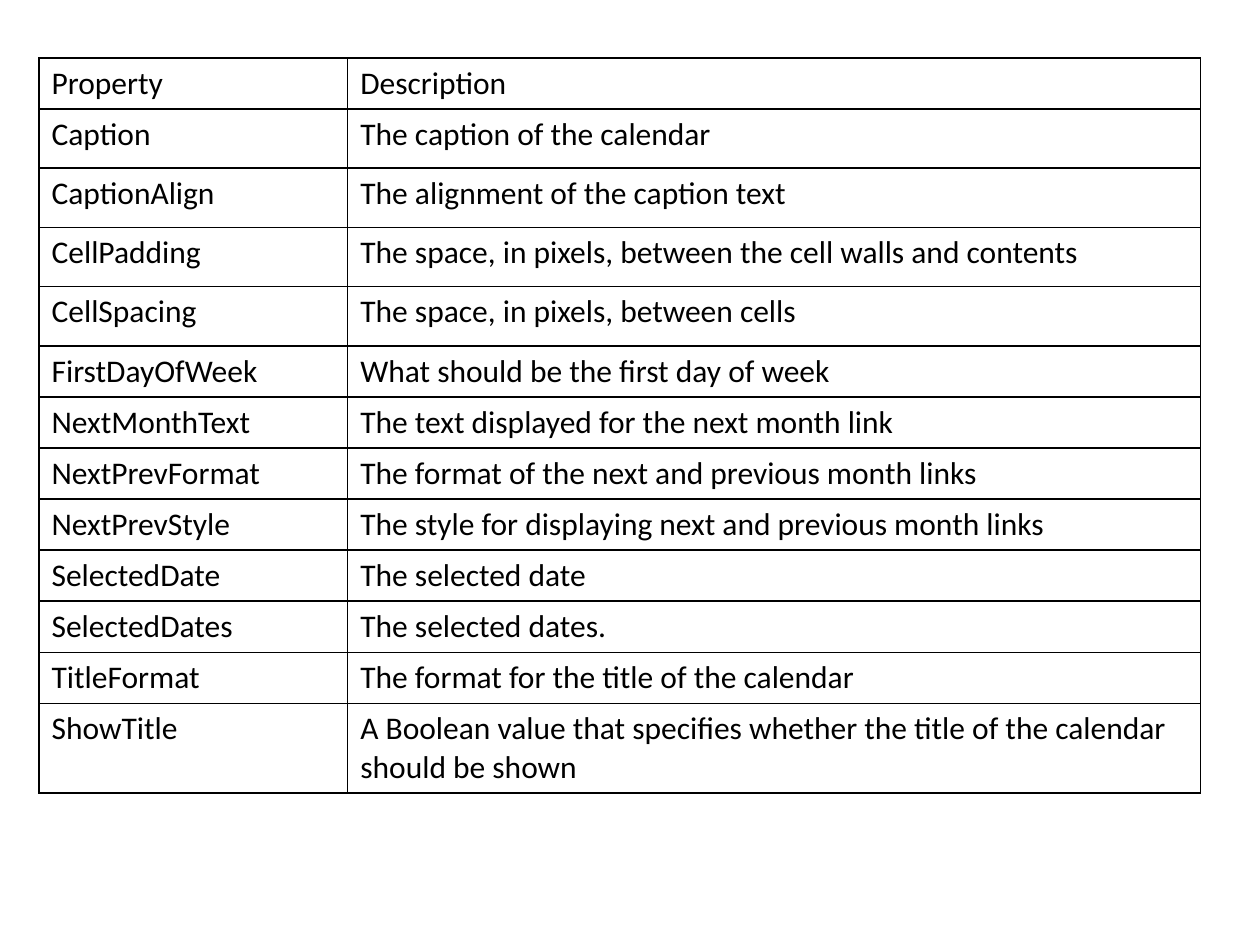
from dataclasses import dataclass

from lxml.etree import SubElement
from pptx import Presentation
from pptx.dml.color import RGBColor
from pptx.oxml.ns import qn
from pptx.util import Inches, Pt


@dataclass(frozen=True)
class Theme:
    font: str = "Calibri"
    size: float = 18
    ink: str = "000000"
    paper: str = "FFFFFF"
    border: float = 1


THEME = Theme()
SLIDE_WIDTH, SLIDE_HEIGHT = 10, 7.5
TABLE_BOX = (0.31, 0.46, 9.22, 5.78)
COLUMN_SHARES = (2.45 / 9.22, 6.77 / 9.22)
ROW_WEIGHTS = [0.4] + [0.47] * 4 + [0.4] * 7 + [0.7]

PROPERTIES = [
    ("Property", "Description"),
    ("Caption", "The caption of the calendar"),
    ("CaptionAlign", "The alignment of the caption text"),
    ("CellPadding", "The space, in pixels, between the cell walls and contents"),
    ("CellSpacing", "The space, in pixels, between cells"),
    ("FirstDayOfWeek", "What should be the first day of week"),
    ("NextMonthText", "The text displayed for the next month link"),
    ("NextPrevFormat", "The format of the next and previous month links"),
    ("NextPrevStyle", "The style for displaying next and previous month links"),
    ("SelectedDate", "The selected date"),
    ("SelectedDates", "The selected dates."),
    ("TitleFormat", "The format for the title of the calendar"),
    ("ShowTitle", "A Boolean value that specifies whether the title of the calendar should be shown"),
]


def add_borders(cell):
    properties = cell._tc.get_or_add_tcPr()
    for side in ("a:lnL", "a:lnR", "a:lnT", "a:lnB"):
        line = SubElement(properties, qn(side), w=str(Pt(THEME.border)))
        fill = SubElement(line, qn("a:solidFill"))
        SubElement(fill, qn("a:srgbClr"), val=THEME.ink)


def fill_cell(cell, text):
    add_borders(cell)
    cell.fill.solid()
    cell.fill.fore_color.rgb = RGBColor.from_string(THEME.paper)
    span = cell.text_frame.paragraphs[0].add_run()
    span.text = text
    span.font.name = THEME.font
    span.font.size = Pt(THEME.size)
    span.font.bold = False
    span.font.color.rgb = RGBColor.from_string(THEME.ink)


def add_property_table(page, box):
    left, top, width, height = box
    frame = page.shapes.add_table(
        len(PROPERTIES), len(COLUMN_SHARES), *(Inches(length) for length in box)
    )
    table = frame.table
    table.first_row = False
    table.horz_banding = False
    for column, share in zip(table.columns, COLUMN_SHARES):
        column.width = Inches(width * share)
    for row, weight, texts in zip(table.rows, ROW_WEIGHTS, PROPERTIES):
        row.height = Inches(height * weight / sum(ROW_WEIGHTS))
        for cell, text in zip(row.cells, texts):
            fill_cell(cell, text)


def main():
    deck = Presentation()
    deck.slide_width = Inches(SLIDE_WIDTH)
    deck.slide_height = Inches(SLIDE_HEIGHT)
    page = deck.slides.add_slide(deck.slide_layouts[6])
    add_property_table(page, TABLE_BOX)
    deck.save("out.pptx")


if __name__ == "__main__":
    main()
